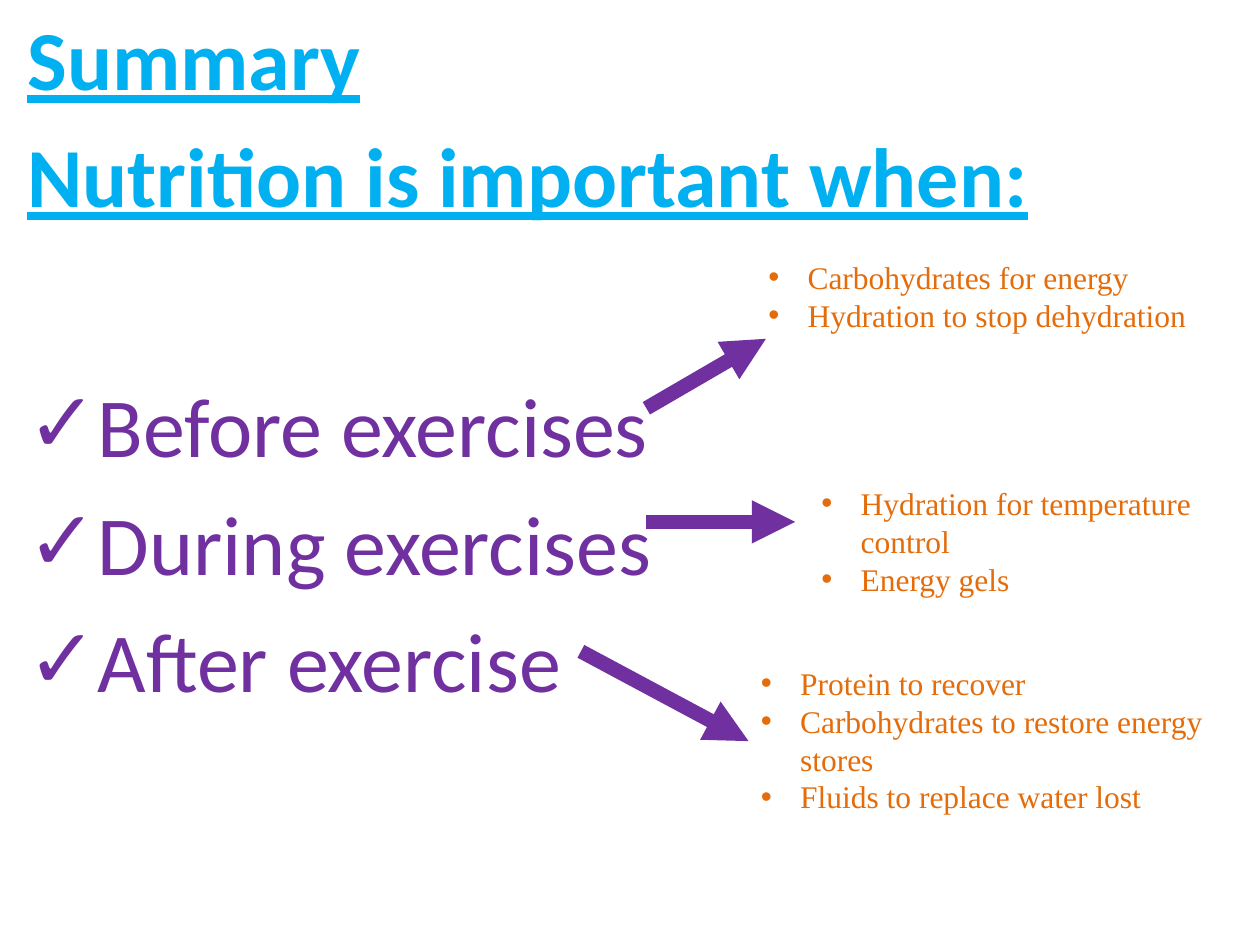
from dataclasses import dataclass

from lxml.etree import SubElement
from pptx import Presentation
from pptx.dml.color import RGBColor as RGB
from pptx.enum.shapes import MSO_CONNECTOR as Line
from pptx.enum.text import MSO_ANCHOR as Anchor, MSO_AUTO_SIZE as Fit
from pptx.oxml.ns import qn
from pptx.util import Cm, Pt


@dataclass(frozen=True)
class Theme:
    head: RGB = RGB(0x00, 0xB0, 0xF0)
    main: RGB = RGB(0x70, 0x30, 0xA0)
    note: RGB = RGB(0xE4, 0x6C, 0x0A)
    sans: str = "Calibri"
    serif: str = "Times New Roman"
    mark: str = "Arial"
    big: Pt = Pt(48)
    small: Pt = Pt(18)
    stroke: Pt = Pt(8.25)
    gap: Pt = Pt(85)


THEME = Theme()

HEADS = ["Summary", "Nutrition is important when:"]
STAGES = ["Before exercises", "During exercises", "After exercise"]

# Box (left, top, width, height) in cm, anchor, lines
NOTES = [
    ((15.24, 5.08, 10.67, 1.8), Anchor.TOP,
     ["Carbohydrates for energy", "Hydration to stop dehydration"]),
    ((16.31, 8.84, 9.6, 3.33), Anchor.BOTTOM,
     ["Hydration for temperature control", "Energy gels"]),
    ((15.09, 13.26, 9.8, 3.33), Anchor.TOP,
     ["Protein to recover", "Carbohydrates to restore energy stores",
      "Fluids to replace water lost"]),
]

# Start x, y and end x, y in cm
ARROWS = [
    (13.03, 8.23, 15.44, 6.83),
    (13.03, 10.52, 16.03, 10.52),
    (11.71, 13.13, 15.09, 14.94),
]


def set_bullet(para, char="", indent=0):
    """Give the paragraph a hanging bullet, or none when char is empty."""
    props = para._p.get_or_add_pPr()
    props.set("marL", str(Cm(indent)))
    props.set("indent", str(-Cm(indent)))
    if char:
        SubElement(props, qn("a:buFont"), typeface=THEME.mark)
        SubElement(props, qn("a:buChar"), char=char)
    else:
        SubElement(props, qn("a:buNone"))


def style(para, face, size, color, strong=False):
    font = para.font
    font.name, font.size = face, size
    font.bold = font.underline = strong
    font.color.rgb = color


def fill_body(body):
    body.left, body.top = Cm(0.3), Cm(0)
    body.width, body.height = Cm(22.86), Cm(18.14)
    frame = body.text_frame
    frame.auto_size = Fit.NONE
    frame.text = "\n".join(HEADS + STAGES)
    paras = frame.paragraphs
    heads, stages = paras[:len(HEADS)], paras[len(HEADS):]
    for para in heads:
        set_bullet(para)
        style(para, THEME.sans, THEME.big, THEME.head, strong=True)
    for para in stages:
        set_bullet(para, "✓", 0.95)
        style(para, THEME.sans, THEME.big, THEME.main)
    stages[0].space_before = THEME.gap


def add_note(slide, box, anchor, lines):
    frame = slide.shapes.add_textbox(*map(Cm, box)).text_frame
    frame.word_wrap = True
    frame.vertical_anchor = anchor
    frame.text = "\n".join(lines)
    for para in frame.paragraphs:
        set_bullet(para, "•", 0.79)
        style(para, THEME.serif, THEME.small, THEME.note)


def add_arrow(slide, ends):
    arrow = slide.shapes.add_connector(Line.STRAIGHT, *map(Cm, ends))
    arrow.line.color.rgb = THEME.main
    arrow.line.width = THEME.stroke
    SubElement(arrow.line._get_or_add_ln(), qn("a:tailEnd"), type="triangle")
    SubElement(arrow._element.spPr, qn("a:effectLst"))


def main():
    deck = Presentation()
    deck.slide_width, deck.slide_height = Cm(25.4), Cm(19.05)
    slide = deck.slides.add_slide(deck.slide_layouts.get_by_name("Title and Content"))
    title = slide.shapes.title._element
    title.getparent().remove(title)
    fill_body(slide.placeholders[1])
    for note in NOTES:
        add_note(slide, *note)
    for ends in ARROWS:
        add_arrow(slide, ends)
    deck.save("out.pptx")


if __name__ == "__main__":
    main()
